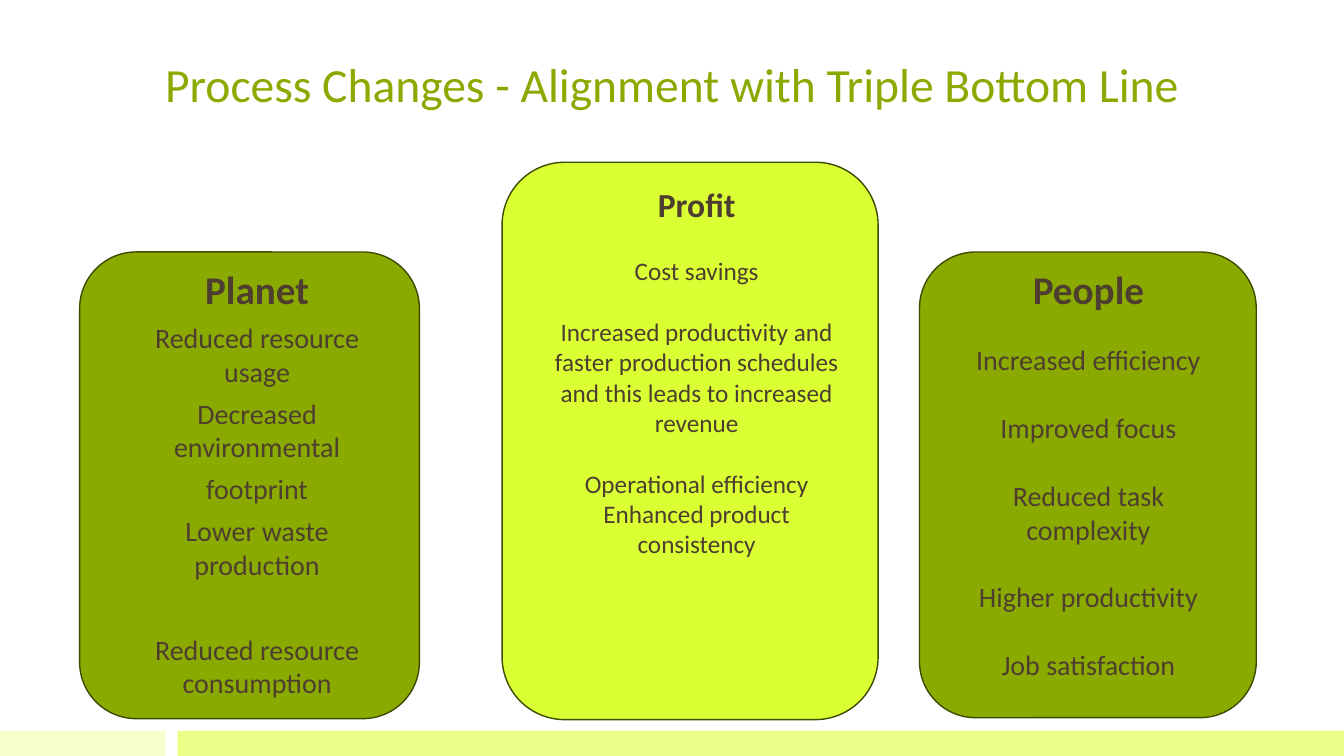
from pptx import Presentation
from pptx import util as u
from pptx.dml.color import RGBColor
from pptx.enum import shapes, text

OLIVE = RGBColor(0x8B, 0xAA, 0x00)
LIME = RGBColor(0xDA, 0xFF, 0x33)
PALE_LIME = RGBColor(0xE9, 0xFF, 0x88)
PALEST_LIME = RGBColor(0xF6, 0xFF, 0xCC)
DARK_OLIVE = RGBColor(0x3D, 0x4B, 0x00)
BROWN = RGBColor(0x4D, 0x3E, 0x2F)
FONT = "Calibri"

TITLE = "Process Changes - Alignment with Triple Bottom Line"
FOOTER_BARS = [
    ((0, 7.25, 1.64, 0.25), PALEST_LIME),
    ((1.76, 7.25, 11.57, 0.25), PALE_LIME),
]
PILLARS = [
    {
        "heading": "People", "heading_size": 28, "body_size": 20,
        "card": (9.12, 2.5, 3.34, 4.62), "fill": OLIVE,
        "box": (9.54, 2.58, 2.51, 4.92),
        "points": [
            ("Increased efficiency", 22),
            ("Improved focus", 24.4),
            ("Reduced task complexity", 24.4),
            ("Higher productivity", 24.4),
            ("Job satisfaction", 24.4),
        ],
    },
    {
        "heading": "Planet", "heading_size": 28, "body_size": 20,
        "card": (0.79, 2.5, 3.37, 4.63), "fill": OLIVE,
        "box": (1.16, 2.58, 2.78, 4.92),
        "points": [
            ("Reduced resource usage", 6),
            ("Decreased environmental", 6),
            ("footprint", 6),
            ("Lower waste production", 6),
            ("Reduced resource consumption", 36.4),
        ],
    },
    {
        "heading": "Profit", "heading_size": 24, "body_size": 18,
        "card": (4.98, 1.61, 3.73, 5.53), "fill": LIME,
        "box": (5.33, 1.78, 3.16, 4.14),
        "points": [
            ("Cost savings", 22),
            ("Increased productivity and faster production schedules "
             "and this leads to increased revenue", 22),
            ("Operational efficiency", 22),
            ("Enhanced product consistency", 0),
        ],
    },
]


def inches(lengths):
    return [u.Inches(length) for length in lengths]


def add_block(slide, kind, place, fill, line=None):
    shape = slide.shapes.add_shape(kind, *inches(place))
    shape.shadow.inherit = False
    shape.fill.solid()
    shape.fill.fore_color.rgb = fill
    if line is None:
        shape.line.fill.background()
    else:
        shape.line.color.rgb = line
        shape.line.width = u.Pt(1)


def write(paragraph, words, color, size, bold=False, space_before=0):
    paragraph.alignment = text.PP_ALIGN.CENTER
    paragraph.space_before = u.Pt(space_before)
    run = paragraph.add_run()
    run.text = words
    font_format = {"name": FONT, "size": u.Pt(size), "bold": bold}
    for attribute, value in font_format.items():
        setattr(run.font, attribute, value)
    run.font.color.rgb = color


def add_pillar(slide, pillar):
    add_block(slide, shapes.MSO_SHAPE.ROUNDED_RECTANGLE,
              pillar["card"], pillar["fill"], DARK_OLIVE)
    frame = slide.shapes.add_textbox(*inches(pillar["box"])).text_frame
    frame.word_wrap = True
    write(frame.paragraphs[0], pillar["heading"], BROWN,
          pillar["heading_size"], bold=True)
    for words, gap in pillar["points"]:
        write(frame.add_paragraph(), words, BROWN,
              pillar["body_size"], space_before=gap)


def add_title(slide):
    title = slide.shapes.title
    title.left, title.top, title.width, title.height = inches((0, 0, 13.33, 1.16))
    frame_format = {
        "vertical_anchor": text.MSO_ANCHOR.BOTTOM,
        "word_wrap": True,
        "auto_size": text.MSO_AUTO_SIZE.NONE,
    }
    for attribute, value in frame_format.items():
        setattr(title.text_frame, attribute, value)
    write(title.text_frame.paragraphs[0], TITLE, OLIVE, 34)


def main():
    presentation = Presentation()
    presentation.slide_width = u.Inches(13.33)
    presentation.slide_height = u.Inches(7.5)
    slide = presentation.slides.add_slide(presentation.slide_layouts[5])
    add_title(slide)
    for place, color in FOOTER_BARS:
        add_block(slide, shapes.MSO_SHAPE.RECTANGLE, place, color)
    for pillar in PILLARS:
        add_pillar(slide, pillar)
    presentation.save("out.pptx")


if __name__ == "__main__":
    main()
